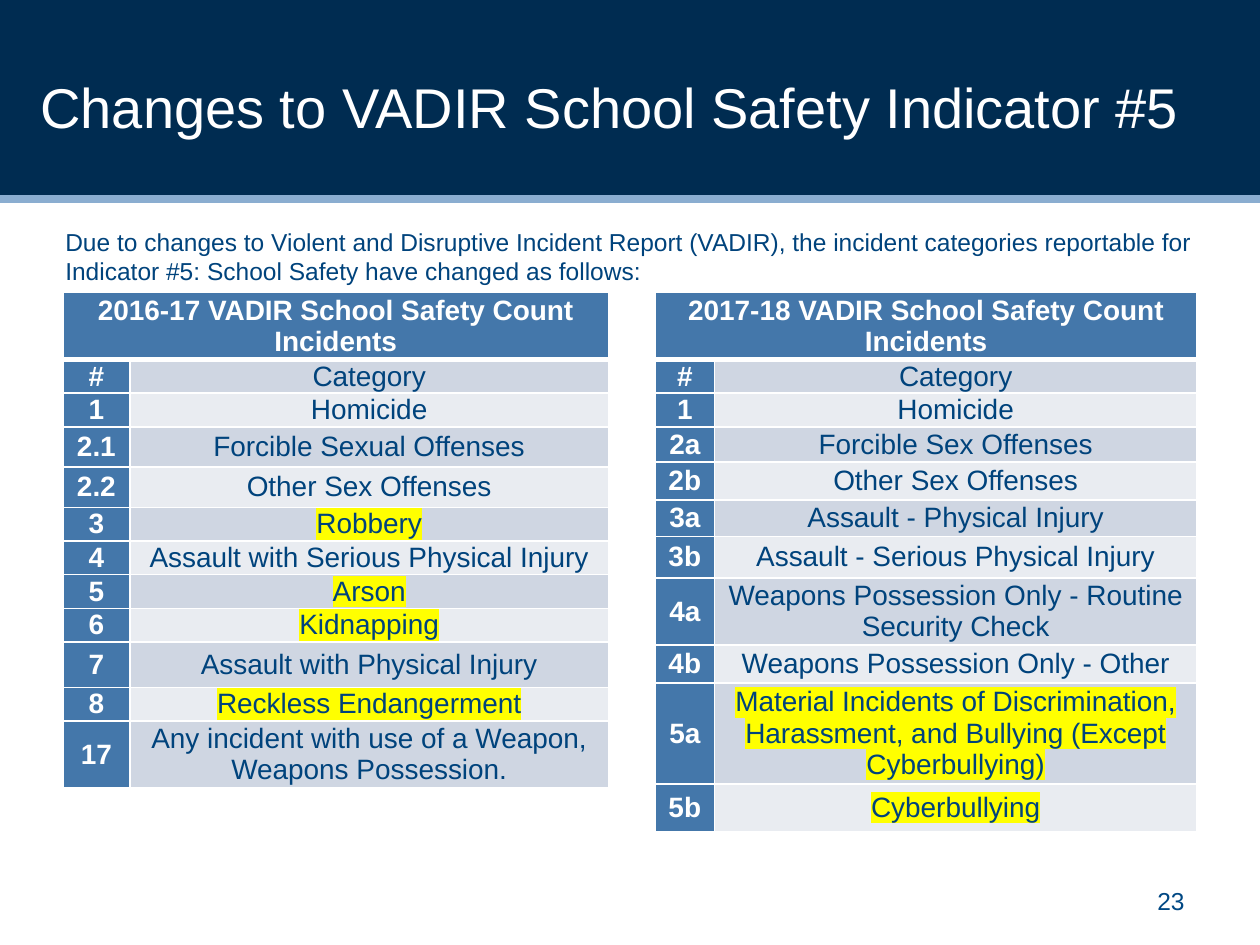
from lxml import etree
from pptx import Presentation
from pptx.dml.color import RGBColor
from pptx.enum.shapes import MSO_CONNECTOR as CONN, MSO_SHAPE as SHAPE
from pptx.enum.text import MSO_ANCHOR as ANCHOR, PP_ALIGN as ALIGN
from pptx.oxml import parse_xml
from pptx.oxml.ns import nsdecls, qn
from pptx.util import Inches, Pt

WHITE, NAVY, BLUE, TEXT = "FFFFFF", "002C51", "4477AA", "00437C"
BANDS = ["CFD6E2", "E9ECF1"]


def rgb(color):
    return RGBColor.from_string(color)


def add_run(tf, text, size, color, align=ALIGN.LEFT, bold=False):
    p = tf.paragraphs[0]
    p.alignment = align
    r = p.add_run()
    r.text = text
    r.font.size = Pt(size)
    r.font.bold = bold
    r.font.color.rgb = rgb(color)
    r.font.name = "Arial"
    return r


prs = Presentation()
prs.slide_width, prs.slide_height = Inches(10), Inches(7.5)
s = prs.slides.add_slide(prs.slide_layouts[5])

# Header band, placed behind the title
band = s.shapes.add_shape(SHAPE.RECTANGLE, 0, 0, Inches(10), Inches(1.58))
band.shadow.inherit = False
band.fill.solid()
band.fill.fore_color.rgb = rgb(NAVY)
band.line.fill.background()
rule = s.shapes.add_connector(CONN.STRAIGHT, 0, Inches(1.58), Inches(10), Inches(1.58))
rule.line.color.rgb = rgb("8AADD0")
rule.line.width = Pt(4.5)
etree.SubElement(rule._element.spPr, qn("a:effectLst"))

title = s.shapes.title
title.left, title.top = Inches(0.22), Inches(0.22)
title.width, title.height = Inches(9.61), Inches(1.25)
title.text_frame.vertical_anchor = ANCHOR.MIDDLE
add_run(title.text_frame, "Changes to VADIR School Safety Indicator #5", 32, WHITE)
s.shapes._spTree.append(title._element)

# Introduction and slide number
intro = s.shapes.add_textbox(Inches(0.42), Inches(1.75), Inches(9.17), Inches(0.57))
intro.text_frame.word_wrap = True
add_run(intro.text_frame, "Due to changes to Violent and Disruptive Incident Report (VADIR), "
        "the incident categories reportable for Indicator #5: School Safety "
        "have changed as follows:", 14, TEXT)
number = s.shapes.add_textbox(Inches(7.17), Inches(6.95), Inches(2.33), Inches(0.4))
number.text_frame.word_wrap = True
number.text_frame.vertical_anchor = ANCHOR.MIDDLE
add_run(number.text_frame, "23", 14, "004884", ALIGN.RIGHT)

# Incident tables: left edge, column widths, heading, rows of (number, category, height)
tables = [
    (0.5, [0.53, 3.8], "2016-17 VADIR School Safety Count Incidents", [
        ("#", "Category", 0.25),
        ("1", "Homicide", 0.25),
        ("2.1", "Forcible Sexual Offenses", 0.32),
        ("2.2", "Other Sex Offenses", 0.32),
        ("3", "Robbery", 0.25),
        ("4", "Assault with Serious Physical Injury", 0.25),
        ("5", "Arson", 0.25),
        ("6", "Kidnapping", 0.25),
        ("7", "Assault with Physical Injury", 0.36),
        ("8", "Reckless Endangerment", 0.25),
        ("17", "Any incident with use of a Weapon, Weapons Possession.", 0.5),
    ]),
    (5.2, [0.47, 3.83], "2017-18 VADIR School Safety Count Incidents", [
        ("#", "Category", 0.25),
        ("1", "Homicide", 0.25),
        ("2a", "Forcible Sex Offenses", 0.28),
        ("2b", "Other Sex Offenses", 0.3),
        ("3a", "Assault - Physical Injury", 0.29),
        ("3b", "Assault - Serious Physical Injury", 0.33),
        ("4a", "Weapons Possession Only - Routine Security Check", 0.49),
        ("4b", "Weapons Possession Only - Other", 0.3),
        ("5a", "Material Incidents of Discrimination, Harassment, and Bullying "
               "(Except Cyberbullying)", 0.74),
        ("5b", "Cyberbullying", 0.38),
    ]),
]
changed = {"Robbery", "Arson", "Kidnapping", "Reckless Endangerment", "Cyberbullying",
           tables[1][3][8][1]}

for left, widths, heading, rows in tables:
    rows = [(heading, "", 0.49)] + rows
    frame = s.shapes.add_table(len(rows), 2, Inches(left), Inches(2.32),
                               Inches(sum(widths)), Inches(sum(row[2] for row in rows)))
    table = frame.table
    for column, width in zip(table.columns, widths):
        column.width = Inches(width)
    table.cell(0, 0).merge(table.cell(0, 1))

    for i, row in enumerate(rows):
        table.rows[i].height = Inches(row[2])
        for j, text in enumerate(row[:2]):
            cell = table.cell(i, j)
            is_head = i == 0 or j == 0
            cell.fill.solid()
            cell.fill.fore_color.rgb = rgb(BLUE if is_head else BANDS[(i - 1) % 2])
            cell.vertical_anchor = ANCHOR.MIDDLE
            cell.margin_left = cell.margin_right = Inches(0.07)
            cell.margin_top = cell.margin_bottom = 0

            # White borders, thicker below the heading
            tcPr = cell._tc.get_or_add_tcPr()
            for k, side in enumerate("LRTB"):
                thick = (i, side) in [(0, "B"), (1, "T")]
                tcPr.insert(k, parse_xml(
                    f'<a:ln{side} {nsdecls("a")} w="{Pt(3 if thick else 1)}"><a:solidFill>'
                    f'<a:srgbClr val="{WHITE}"/></a:solidFill></a:ln{side}>'))

            if text:
                r = add_run(cell.text_frame, text, 16, WHITE if is_head else TEXT,
                            ALIGN.CENTER, is_head)
                if text in changed:
                    r._r.rPr.find(qn("a:solidFill")).addnext(parse_xml(
                        f'<a:highlight {nsdecls("a")}><a:srgbClr val="FFFF00"/></a:highlight>'))

prs.save("out.pptx")
